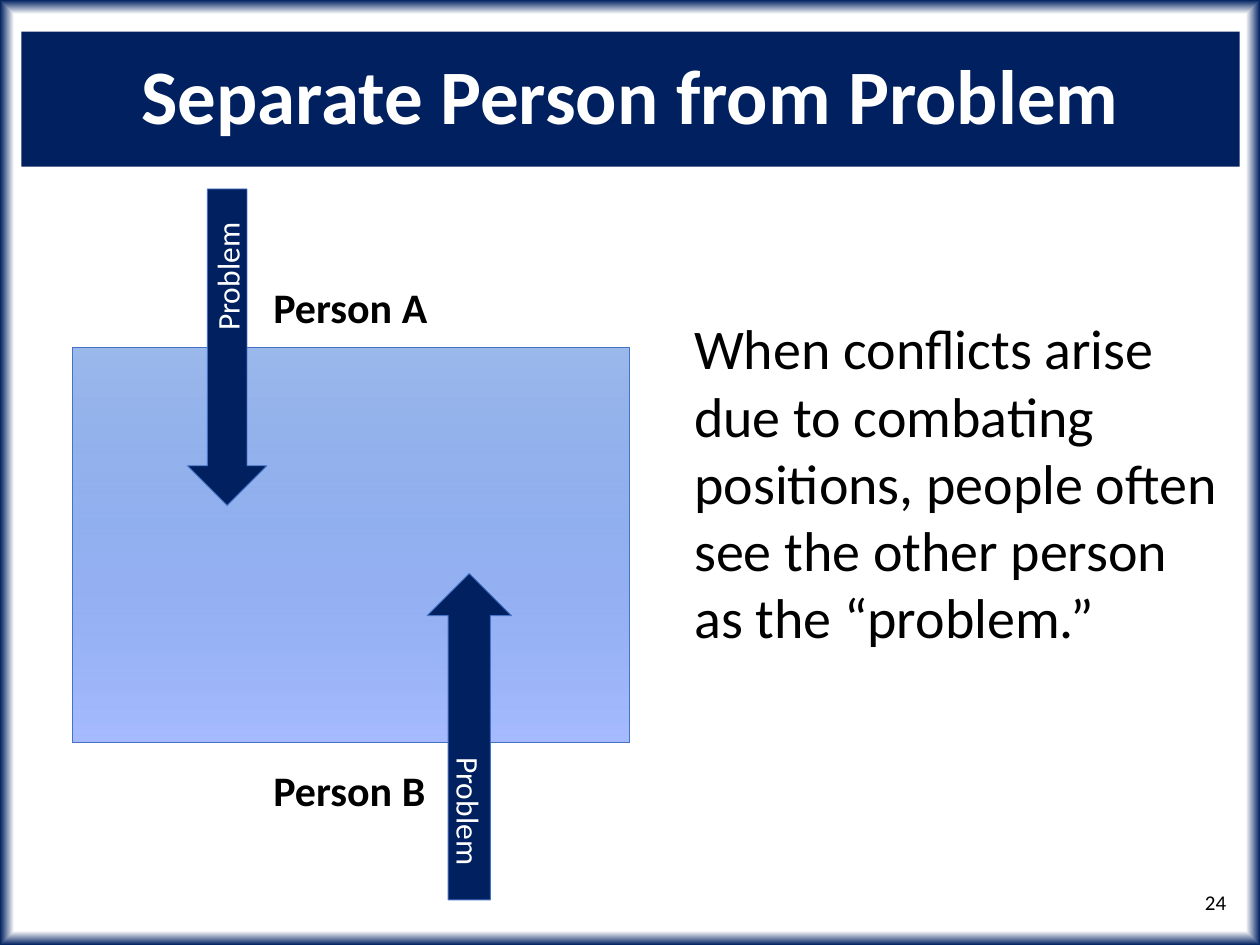
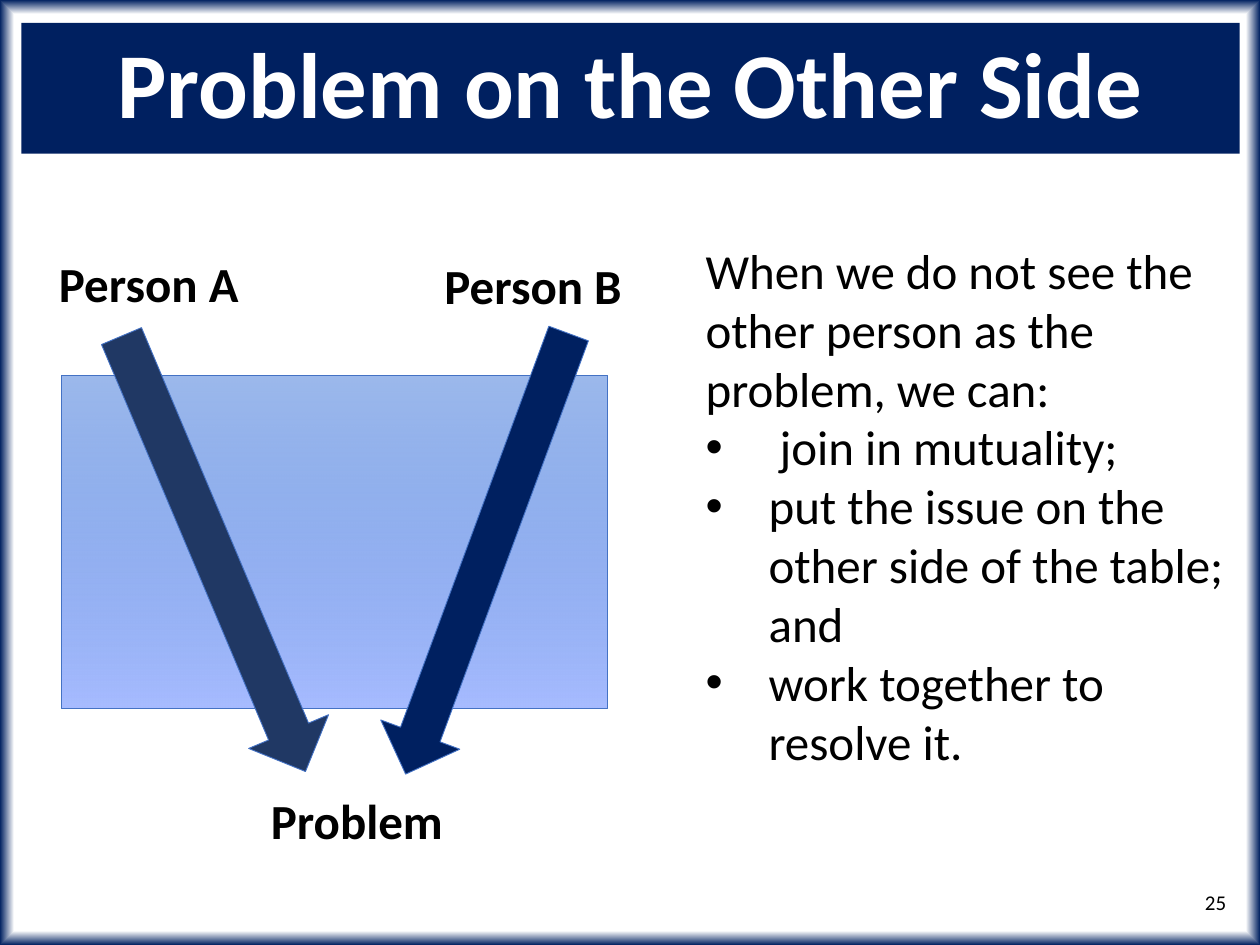
from lxml.etree import SubElement
from pptx import Presentation
from pptx.dml.color import RGBColor
from pptx.enum.shapes import MSO_SHAPE as Preset
from pptx.enum.text import MSO_ANCHOR as Anchor, MSO_AUTO_SIZE as AutoSize, PP_ALIGN as Align
from pptx.oxml.ns import qn
from pptx.util import Cm, Pt

NAVY, SLATE, BLUE = "002060", "203864", "4472C4"
WHITE, BLACK = "FFFFFF", "000000"


def color(code):
    return RGBColor.from_string(code)


def place(shape, left, top, width, height):
    shape.left, shape.top, shape.width, shape.height = map(Cm, (left, top, width, height))


def start_gradient(fill, owner, stops):
    fill.gradient()
    gradient = next(owner.iter(qn("a:gradFill")))
    gradient.clear()
    stop_list = SubElement(gradient, qn("a:gsLst"))
    for position, code, alpha in stops:
        stop = SubElement(stop_list, qn("a:gs"), pos=str(position * 1000))
        tint = SubElement(stop, qn("a:srgbClr"), val=code)
        if alpha < 100:
            SubElement(tint, qn("a:alpha"), val=str(alpha * 1000))
    return gradient


class SlideBuilder:
    font = "Calibri"

    def __init__(self, deck):
        self.deck = deck
        self.page = None
        self.frame_background()

    def frame_background(self):
        master = self.deck.slide_master
        stops = [(97, WHITE, 100), (100, NAVY, 100)]
        gradient = start_gradient(master.background.fill, master.element, stops)
        outline = SubElement(gradient, qn("a:path"), path="shape")
        SubElement(outline, qn("a:fillToRect"), l="50000", t="50000", r="50000", b="50000")

    def style(self, para, size, code=BLACK, bold=False, align=Align.LEFT):
        para.alignment = align
        para.font.name = self.font
        para.font.size = Pt(size)
        para.font.bold = bold
        para.font.color.rgb = color(code)

    def add_page(self, number):
        self.page = self.deck.slides.add_slide(self.deck.slide_layouts[1])
        box = self.label(str(number), 19.25, 17.68, 5.72, 1.02, 12, False, Align.RIGHT)
        box.text_frame.vertical_anchor = Anchor.MIDDLE

    def title(self, text, top, height, size):
        title = self.page.shapes.title
        place(title, 0.43, top, 24.56, height)
        title.fill.solid()
        title.fill.fore_color.rgb = color(NAVY)
        frame = title.text_frame
        frame.text = text
        frame.auto_size = AutoSize.NONE
        frame.vertical_anchor = Anchor.MIDDLE
        para = frame.paragraphs[0]
        para.line_spacing = 0.9
        self.style(para, size, WHITE, True, Align.CENTER)

    def body(self, intro, points, left, top, width, height, size):
        body = self.page.placeholders[1]
        place(body, left, top, width, height)
        frame = body.text_frame
        frame.text = "\n".join([intro, *points])
        frame.auto_size = AutoSize.NONE
        for index, para in enumerate(frame.paragraphs):
            hanging = Cm(1.27) if index else 0
            properties = para._p.get_or_add_pPr()
            properties.set("marL", str(hanging))
            properties.set("indent", str(-hanging))
            if index:
                SubElement(properties, qn("a:buFont"), typeface="Arial")
                SubElement(properties, qn("a:buChar"), char="•")
            else:
                SubElement(properties, qn("a:buNone"))
            para.space_before = Pt(0)
            self.style(para, size)

    def label(self, text, left, top, width, height, size, bold=True, align=Align.LEFT):
        box = self.page.shapes.add_textbox(*map(Cm, (left, top, width, height)))
        box.text_frame.word_wrap = True
        box.text_frame.text = text
        self.style(box.text_frame.paragraphs[0], size, BLACK, bold, align)
        return box

    def shape(self, preset, left, top, width, height):
        shape = self.page.shapes.add_shape(preset, *map(Cm, (left, top, width, height)))
        shape.shadow.inherit = False
        shape.line.color.rgb = color(BLUE)
        shape.line.width = Pt(0.5)
        return shape

    def table_top(self, left, top, width, height):
        table = self.shape(Preset.RECTANGLE, left, top, width, height)
        stops = [(0, "316DD7", 48), (100, "A6BBFF", 100)]
        gradient = start_gradient(table.fill, table._element, stops)
        SubElement(gradient, qn("a:lin"), ang="5400000", scaled="0")

    def arrow(self, left, top, width, height, rotation=0, fill=NAVY, text="", indent=0):
        arrow = self.shape(Preset.DOWN_ARROW, left, top, width, height)
        arrow.rotation = rotation
        arrow.fill.solid()
        arrow.fill.fore_color.rgb = color(fill)
        if text:
            frame = arrow.text_frame
            frame.text = text
            frame.vertical_anchor = Anchor.MIDDLE
            frame._txBody.bodyPr.set("vert", "vert270")
            para = frame.paragraphs[0]
            para._p.get_or_add_pPr().set("marL", str(Cm(indent)))
            self.style(para, 18, WHITE, align=Align.CENTER)


def separate_person(builder):
    builder.add_page(24)
    builder.title("Separate Person from Problem", 0.64, 2.72, 44)
    builder.body(
        "When conflicts arise due to combating positions, people often see "
        "the other person as the “problem.”",
        [], 13.74, 6.2, 11.23, 8.46, 32)
    builder.table_top(1.47, 7.01, 11.23, 7.95)
    builder.arrow(3.78, 3.81, 1.6, 6.38, text="Problem", indent=2.44)
    builder.arrow(8.61, 11.56, 1.7, 6.58, 180, text="Problem", indent=2.58)
    for person, top in (("Person A", 5.56), ("Person B", 15.29)):
        builder.label(person, 5.26, top, 5.05, 1.27, 24)


def problem_other_side(builder):
    builder.add_page(25)
    builder.title("Problem on the Other Side", 0.46, 2.64, 53)
    builder.body(
        "When we do not see the other person as the problem, we can:",
        [" join in mutuality;",
         "put the issue on the other side of the table; and",
         "work together to resolve it."],
        13.97, 4.72, 11, 11.02, 28)
    builder.table_top(1.24, 7.57, 11, 6.71)
    for person, left, top in (("Person A", 0.94, 4.98), ("Person B", 8.71, 5.03)):
        builder.label(person, left, top, 5.05, 1.45, 28)
    builder.arrow(3.43, 6.4, 1.75, 9.53, 337.1, SLATE)
    builder.arrow(8.97, 6.43, 1.7, 9.47, 20.3)
    builder.label("Problem", 2.84, 15.82, 8.71, 1.45, 28, align=Align.CENTER)


def main():
    deck = Presentation()
    deck.slide_width, deck.slide_height = Cm(25.4), Cm(19.05)
    builder = SlideBuilder(deck)
    separate_person(builder)
    problem_other_side(builder)
    deck.save("out.pptx")


if __name__ == "__main__":
    main()
